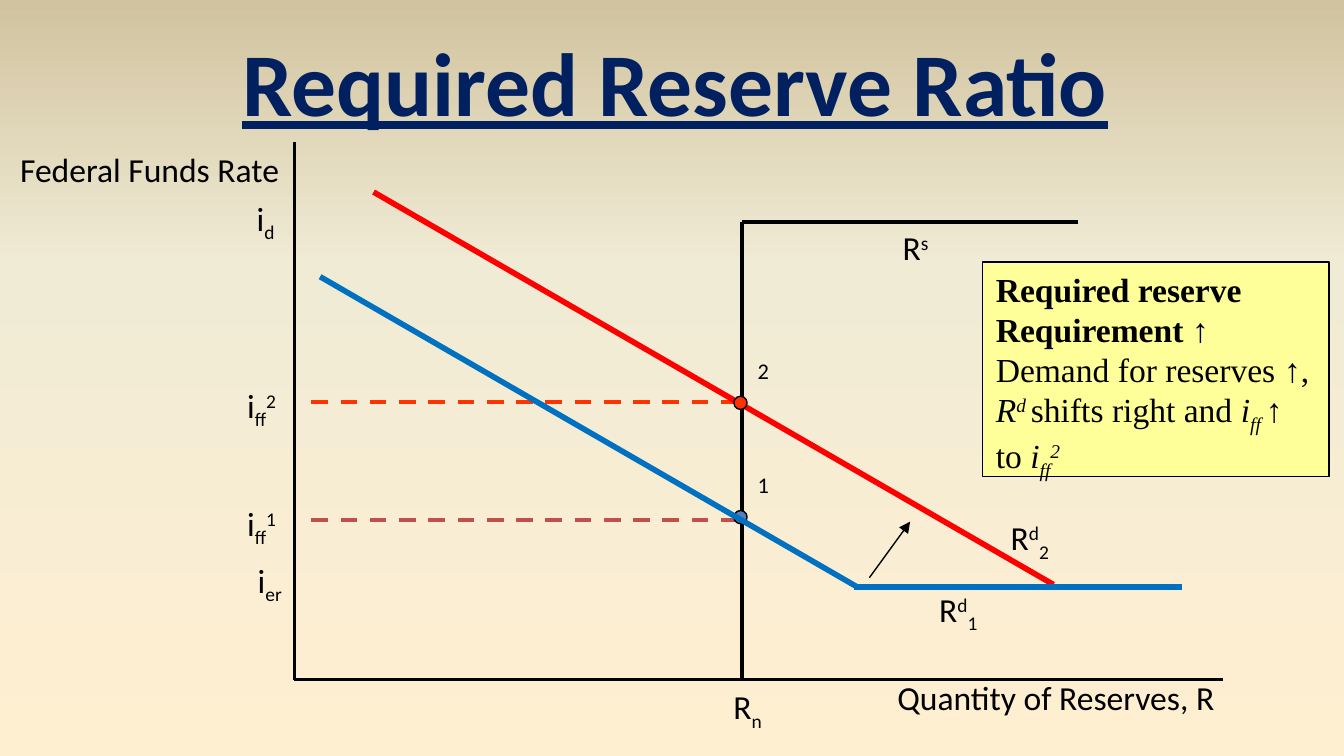
from copy import deepcopy
from dataclasses import dataclass

from lxml.etree import SubElement
from pptx import Presentation
from pptx.dml.color import RGBColor
from pptx.enum.dml import MSO_LINE
from pptx.enum.shapes import MSO_CONNECTOR, MSO_SHAPE
from pptx.enum.text import MSO_ANCHOR, MSO_AUTO_SIZE, PP_ALIGN
from pptx.oxml.ns import qn
from pptx.util import Cm, Pt


@dataclass(frozen=True)
class Theme:
    """Colours, fonts and type sizes of the slide."""
    black: str = "000000"
    title: str = "002060"
    note: str = "FFFF99"
    first_demand: str = "0070C0"
    second_demand: str = "FF0000"
    first_rate: str = "C0504D"
    second_rate: str = "FF3300"
    first_point: str = "4F81BD"
    background: tuple = ((0, "FFEFD1"), (0.65, "F0EBD5"), (1, "D1C39F"))
    label_font: str = "Calibri"
    note_font: str = "Times New Roman"
    symbol_font: str = "Arial"
    title_size: int = 48
    body_size: int = 18
    point_size: int = 12


@dataclass(frozen=True)
class TextRun:
    """One run of text with its own formatting."""
    text: str
    baseline: int = 0
    font: str = Theme.label_font
    size: int = Theme.body_size
    color: str = Theme.black
    bold: bool = False
    italic: bool = False
    underline: bool = False


THEME = Theme()


def superscript(text, **style):
    """Return a raised run."""
    return TextRun(text, 30000, **style)


def subscript(text, **style):
    """Return a lowered run."""
    return TextRun(text, -25000, **style)


def paint_background(slide):
    """Fill the slide with a vertical three-colour gradient."""
    fill = slide.background.fill
    fill.gradient()
    fill.gradient_angle = 90
    first_stop = fill.gradient_stops[0]._gs
    first_stop.addnext(deepcopy(first_stop))
    for stop, (position, color) in zip(fill.gradient_stops, THEME.background):
        stop.position = position
        stop.color.rgb = RGBColor.from_string(color)


def write_paragraph(paragraph, runs, alignment=PP_ALIGN.LEFT):
    """Add the runs to a paragraph one by one."""
    paragraph.alignment = alignment
    for item in runs:
        run = paragraph.add_run()
        run.text = item.text
        font = run.font
        font.name, font.size = item.font, Pt(item.size)
        font.bold, font.italic, font.underline = item.bold, item.italic, item.underline
        font.color.rgb = RGBColor.from_string(item.color)
        if item.baseline:
            run._r.get_or_add_rPr().set("baseline", str(item.baseline))


def add_label(slide, left, top, width, runs, height=1.02, wrap=False, alignment=PP_ALIGN.LEFT):
    """Add a one-paragraph text box."""
    shape = slide.shapes.add_textbox(Cm(left), Cm(top), Cm(width), Cm(height))
    frame = shape.text_frame
    frame.word_wrap = wrap
    frame.auto_size = MSO_AUTO_SIZE.SHAPE_TO_FIT_TEXT
    write_paragraph(frame.paragraphs[0], runs, alignment)


def add_line(slide, start, end, color, width, dashed=False, arrow=False):
    """Add a straight line between two points."""
    connector = slide.shapes.add_connector(
        MSO_CONNECTOR.STRAIGHT, *(Cm(value) for value in (*start, *end)))
    line = connector.line
    line.color.rgb = RGBColor.from_string(color)
    line.width = Pt(width)
    if dashed:
        line.dash_style = MSO_LINE.DASH
    if arrow:
        SubElement(line._get_or_add_ln(), qn("a:tailEnd"), type="triangle")
    SubElement(connector._element.spPr, qn("a:effectLst"))


def add_filled_shape(slide, kind, box, fill, line_width):
    """Add a preset shape with a black outline."""
    shape = slide.shapes.add_shape(kind, *(Cm(value) for value in box))
    shape.shadow.inherit = False
    shape.fill.solid()
    shape.fill.fore_color.rgb = RGBColor.from_string(fill)
    shape.line.color.rgb = RGBColor.from_string(THEME.black)
    shape.line.width = Pt(line_width)
    return shape


def add_equilibrium(slide, number, top, color):
    """Add a numbered equilibrium point on the supply line."""
    add_filled_shape(slide, MSO_SHAPE.OVAL, (13.87, top, 0.25, 0.25), color, 0.75)
    add_label(slide, 14.07, top - 0.87, 0.74, [TextRun(number, size=THEME.point_size)], 0.76)


def add_rate(slide, number, left, top, color):
    """Add a dashed funds-rate level with its label."""
    add_line(slide, (13.94, top), (left, top), color, 2.25, dashed=True)
    add_label(slide, 4.42, top - 0.45, 1.12,
              [TextRun("i"), subscript("ff"), superscript(number)])


def add_note(slide):
    """Add the yellow explanation box."""
    shape = add_filled_shape(slide, MSO_SHAPE.RECTANGLE, (18.57, 4.95, 6.55, 4.06), THEME.note, 1)
    frame = shape.text_frame
    frame.word_wrap = True
    frame.auto_size = MSO_AUTO_SIZE.SHAPE_TO_FIT_TEXT
    frame.vertical_anchor = MSO_ANCHOR.TOP
    plain = {"font": THEME.note_font}
    italic = {**plain, "italic": True}
    symbol = {"font": THEME.symbol_font}
    write_paragraph(frame.paragraphs[0], [
        TextRun("Required reserve Requirement ", bold=True, **plain),
        TextRun("↑", bold=True, **symbol),
    ])
    write_paragraph(frame.add_paragraph(), [
        TextRun("Demand for reserves ", **plain), TextRun("↑", **symbol), TextRun(", ", **plain),
        TextRun("R", **italic), superscript("d ", **italic),
        TextRun("shifts right and ", **plain),
        TextRun("i", **italic), subscript("ff ", **italic),
        TextRun("↑", **symbol), TextRun(" to ", **plain),
        TextRun("i", **italic), subscript("ff", **italic), superscript("2", **italic),
    ])


def main():
    """Build the reserve market slide."""
    presentation = Presentation()
    presentation.slide_width, presentation.slide_height = Cm(25.4), Cm(14.29)
    slide = presentation.slides.add_slide(presentation.slide_layouts[6])
    paint_background(slide)
    add_note(slide)

    origin, supply_foot, supply_corner = (5.56, 12.85), (14.02, 12.85), (14.02, 4.19)
    add_line(slide, (5.56, 2.69), origin, THEME.black, 1.5)
    add_line(slide, origin, (23.11, 12.85), THEME.black, 1.5)
    add_line(slide, supply_foot, supply_corner, THEME.black, 2.25)
    add_line(slide, supply_corner, (20.37, 4.19), THEME.black, 2.25)

    add_rate(slide, "2", 5.74, 7.6, THEME.second_rate)
    add_rate(slide, "1", 5.69, 9.83, THEME.first_rate)
    add_line(slide, (7.06, 3.63), (19.91, 11.05), THEME.second_demand, 3)
    add_equilibrium(slide, "1", 9.65, THEME.first_point)
    add_equilibrium(slide, "2", 7.49, THEME.second_rate)
    add_line(slide, (16.43, 10.92), (17.2, 9.86), THEME.black, 0.75, arrow=True)
    add_line(slide, (6.05, 5.23), (16.21, 11.1), THEME.first_demand, 3)
    add_line(slide, (16.15, 11.1), (22.33, 11.1), THEME.first_demand, 3)

    for left, top, width, runs in (
        (16.81, 4.17, 1.19, [TextRun("R"), superscript("s")]),
        (4.6, 3.61, 0.89, [TextRun("i"), subscript("d")]),
        (13.61, 12.85, 1.19, [TextRun("R"), subscript("n")]),
        (18.85, 9.65, 1.45, [TextRun("R"), superscript("d"), subscript("2")]),
        (17.5, 11, 1.45, [TextRun("R"), superscript("d"), subscript("1")]),
        (4.62, 10.46, 1.27, [TextRun("i"), subscript("er")]),
    ):
        add_label(slide, left, top, width, runs)
    add_label(slide, 0, 2.69, 5.66, [TextRun("Federal Funds Rate")],
              wrap=True, alignment=PP_ALIGN.CENTER)
    add_label(slide, 16.71, 12.67, 6.55, [TextRun("Quantity of Reserves, R")], wrap=True)
    title = TextRun("Required Reserve Ratio", size=THEME.title_size, color=THEME.title,
                    bold=True, underline=True)
    add_label(slide, 4.24, 0.38, 17.04, [title], 2.31, alignment=PP_ALIGN.CENTER)
    presentation.save("out.pptx")


if __name__ == "__main__":
    main()
